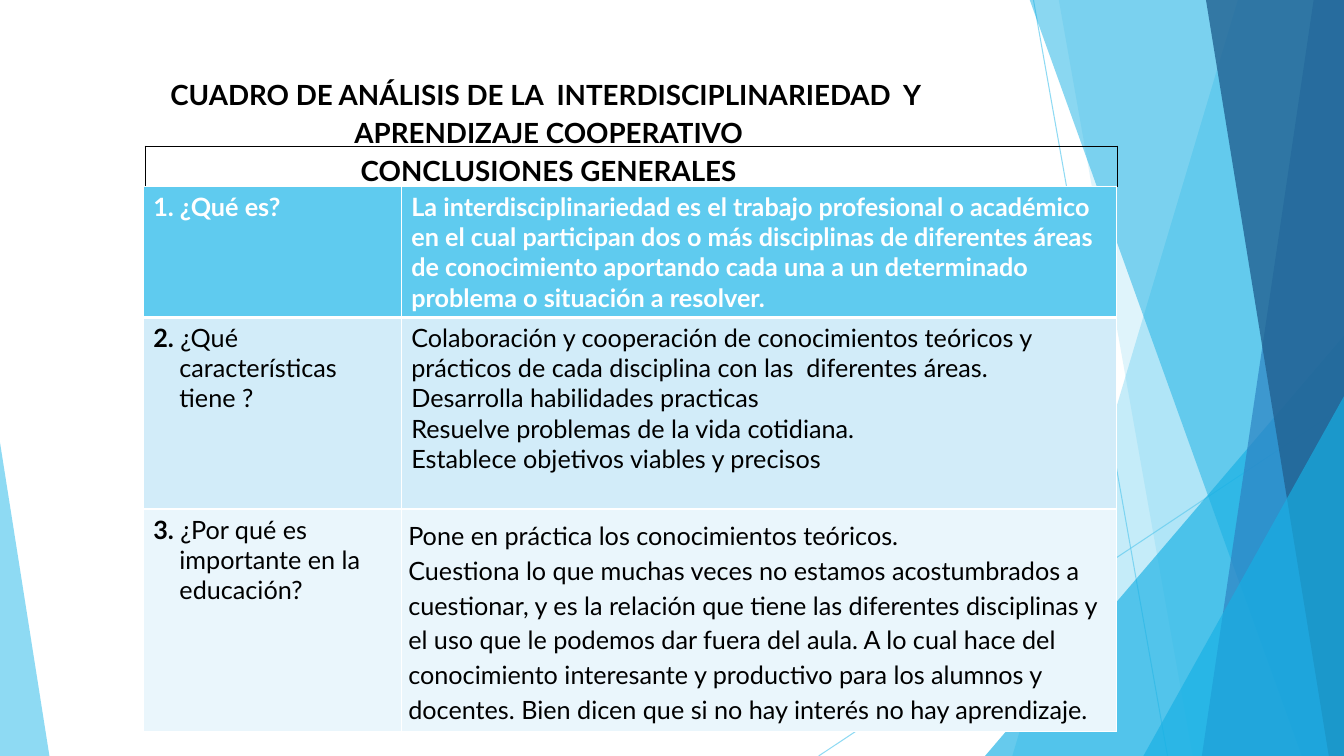
from lxml import etree
from pptx import Presentation
from pptx import util as u
from pptx.dml.color import RGBColor
from pptx.enum import shapes, text
from pptx.oxml.ns import qn

COLORS = {"sky": "5FCBEF", "cyan": "17B0E4", "blue": "2E83C3", "navy": "226292",
          "pale": "D2ECF9", "ice": "EAF6FC", "white": "FFFFFF", "black": "000000"}
FONT = "Lato"
WIDTH, HEIGHT = 13.33, 7.5

TITLE = ("CUADRO DE ANÁLISIS DE LA  INTERDISCIPLINARIEDAD  Y  APRENDIZAJE COOPERATIVO"
         "\vCONCLUSIONES GENERALES")
ROWS = [
    ("1.", ["¿Qué es?"],
     ["La interdisciplinariedad es el trabajo profesional o académico en el cual "
      "participan dos o más disciplinas de diferentes áreas de conocimiento aportando "
      "cada una a un determinado problema o situación a resolver."]),
    ("2.", ["¿Qué", "características", "tiene ?"],
     ["Colaboración y cooperación de conocimientos teóricos y prácticos de cada "
      "disciplina con las  diferentes áreas.",
      "Desarrolla habilidades practicas",
      "Resuelve problemas de la vida cotidiana.",
      "Establece objetivos viables y precisos"]),
    ("3.", ["¿Por qué es", "importante en la", "educación?"],
     ["Pone en práctica los conocimientos teóricos.",
      "Cuestiona lo que muchas veces no estamos acostumbrados a cuestionar, y es la "
      "relación que tiene las diferentes disciplinas y el uso que le podemos dar fuera "
      "del aula. A lo cual hace del conocimiento interesante y productivo para los "
      "alumnos y docentes. Bien dicen que si no hay interés no hay aprendizaje."]),
]
ROW_FILLS = ["sky", "pale", "ice"]
ROW_HEIGHTS = [1.3, 1.9, 2.21]
COLUMN_WIDTHS = [2.56, 7.09]

RAYS = [((10.25, 0), (11.58, HEIGHT)), ((WIDTH, 4.03), (8.12, HEIGHT))]
BANDS = [(12.28, 10.04, "sky", 36), (10.5, 11.83, "sky", 20), (10.21, 12.91, "cyan", 50),
         (13.03, 11.92, "blue", 70), (11.96, 13.18, "navy", 80)]
TRIANGLES = [(9.77, 3.33, 3.56, 1, "cyan", 66), (11.34, 3.93, 1.99, 1, "cyan", 66),
             (0, 4.39, 0.49, 0, "sky", 70)]


def rgb(name):
    return RGBColor.from_string(COLORS[name])


def set_opacity(shape, percent):
    color = next(shape._element.spPr.iter(qn("a:srgbClr")))
    etree.SubElement(color, qn("a:alpha"), val=str(percent * 1000))


def paint(shape, color, percent):
    shape.shadow.inherit = False
    shape.fill.solid()
    shape.fill.fore_color.rgb = rgb(color)
    shape.line.fill.background()
    set_opacity(shape, percent)


def add_ray(page, start, end):
    ray = page.shapes.add_connector(shapes.MSO_CONNECTOR.STRAIGHT,
                                    *map(u.Inches, start + end))
    ray.line.color.rgb = rgb("sky")
    ray.line.width = u.Pt(0.75)
    set_opacity(ray, 70)
    etree.SubElement(ray._element.spPr, qn("a:effectLst"))


def add_band(page, top_x, bottom_x, color, percent):
    corners = [(top_x, -0.01), (WIDTH, -0.01), (WIDTH, HEIGHT), (bottom_x, HEIGHT)]
    points = [(u.Inches(x), u.Inches(y)) for x, y in corners]
    builder = page.shapes.build_freeform(*points[0])
    builder.add_line_segments(points[1:], close=True)
    paint(builder.convert_to_shape(), color, percent)


def add_triangle(page, left, top, width, apex, color, percent):
    triangle = page.shapes.add_shape(shapes.MSO_SHAPE.ISOSCELES_TRIANGLE,
                                     *map(u.Inches, (left, top, width, HEIGHT - top)))
    triangle.adjustments[0] = apex
    paint(triangle, color, percent)


def add_backdrop(page):
    for start, end in RAYS:
        add_ray(page, start, end)
    for band in BANDS[:2]:
        add_band(page, *band)
    add_triangle(page, *TRIANGLES[0])
    for band in BANDS[2:]:
        add_band(page, *band)
    for triangle in TRIANGLES[1:]:
        add_triangle(page, *triangle)


def set_borders(cell, color, **widths):
    properties = cell._tc.get_or_add_tcPr()
    for side in "LRTB":
        line = etree.SubElement(properties, qn("a:ln" + side),
                                w=str(u.Pt(widths.get(side, 1))))
        fill = etree.SubElement(line, qn("a:solidFill"))
        etree.SubElement(fill, qn("a:srgbClr"), val=COLORS[color])


def style(para, size, color, bold):
    para.font.name = FONT
    para.font.size = u.Pt(size)
    para.font.bold = bold
    para.font.color.rgb = rgb(color)


def add_table(page, left, top, widths, heights):
    frame = page.shapes.add_table(len(heights), len(widths), u.Inches(left), u.Inches(top),
                                  u.Inches(sum(widths)), u.Inches(sum(heights)))
    table = frame.table
    table.first_row = table.horz_banding = False
    for column, width in zip(table.columns, widths):
        column.width = u.Inches(width)
    for row, height in zip(table.rows, heights):
        row.height = u.Inches(height)
    return table


def fill_cell(cell, lines, color, header, number=None):
    set_borders(cell, "white", B=3 if header else 1)
    cell.fill.solid()
    cell.fill.fore_color.rgb = rgb(color)
    frame = cell.text_frame
    for index, line in enumerate(lines):
        para = frame.add_paragraph() if index else frame.paragraphs[0]
        style(para, 18, "white" if header else "black", header)
        if number and index == 0:
            span = para.add_run()
            span.text = number
            span.font.bold = True
            line = " " + line
        elif number:
            para._p.get_or_add_pPr().set("marL", str(u.Inches(0.26)))
        para.add_run().text = line


def main():
    deck = Presentation()
    deck.slide_width, deck.slide_height = u.Inches(WIDTH), u.Inches(HEIGHT)
    page = deck.slides.add_slide(deck.slide_layouts[5])
    add_backdrop(page)

    title = page.shapes.title
    title.left, title.top, title.width, title.height = map(u.Inches, (0.74, 0.67, 9.4, 1.44))
    frame = title.text_frame
    frame.text = TITLE
    frame.word_wrap = True
    frame.auto_size = text.MSO_AUTO_SIZE.NONE
    frame.vertical_anchor = text.MSO_ANCHOR.TOP
    para = frame.paragraphs[0]
    para.alignment = text.PP_ALIGN.CENTER
    para.line_spacing = 1.15
    style(para, 19.8, "black", True)

    heading = add_table(page, 1.44, 1.45, [9.64], [0.4]).cell(0, 0)
    set_borders(heading, "black")
    heading.fill.background()
    style(heading.text_frame.paragraphs[0], 12, "black", False)

    table = add_table(page, 1.42, 1.85, COLUMN_WIDTHS, ROW_HEIGHTS)
    for index, (number, question, answer) in enumerate(ROWS):
        header = index == 0
        fill_cell(table.cell(index, 0), question, ROW_FILLS[index], header, number)
        fill_cell(table.cell(index, 1), answer, ROW_FILLS[index], header)

    closing = table.cell(len(ROWS) - 1, 1)
    closing.margin_left = closing.margin_right = u.Inches(0.07)
    closing.margin_top = closing.margin_bottom = u.Inches(0.07)
    for para in closing.text_frame.paragraphs:
        para.line_spacing = 1.15

    deck.save("out.pptx")


if __name__ == "__main__":
    main()
